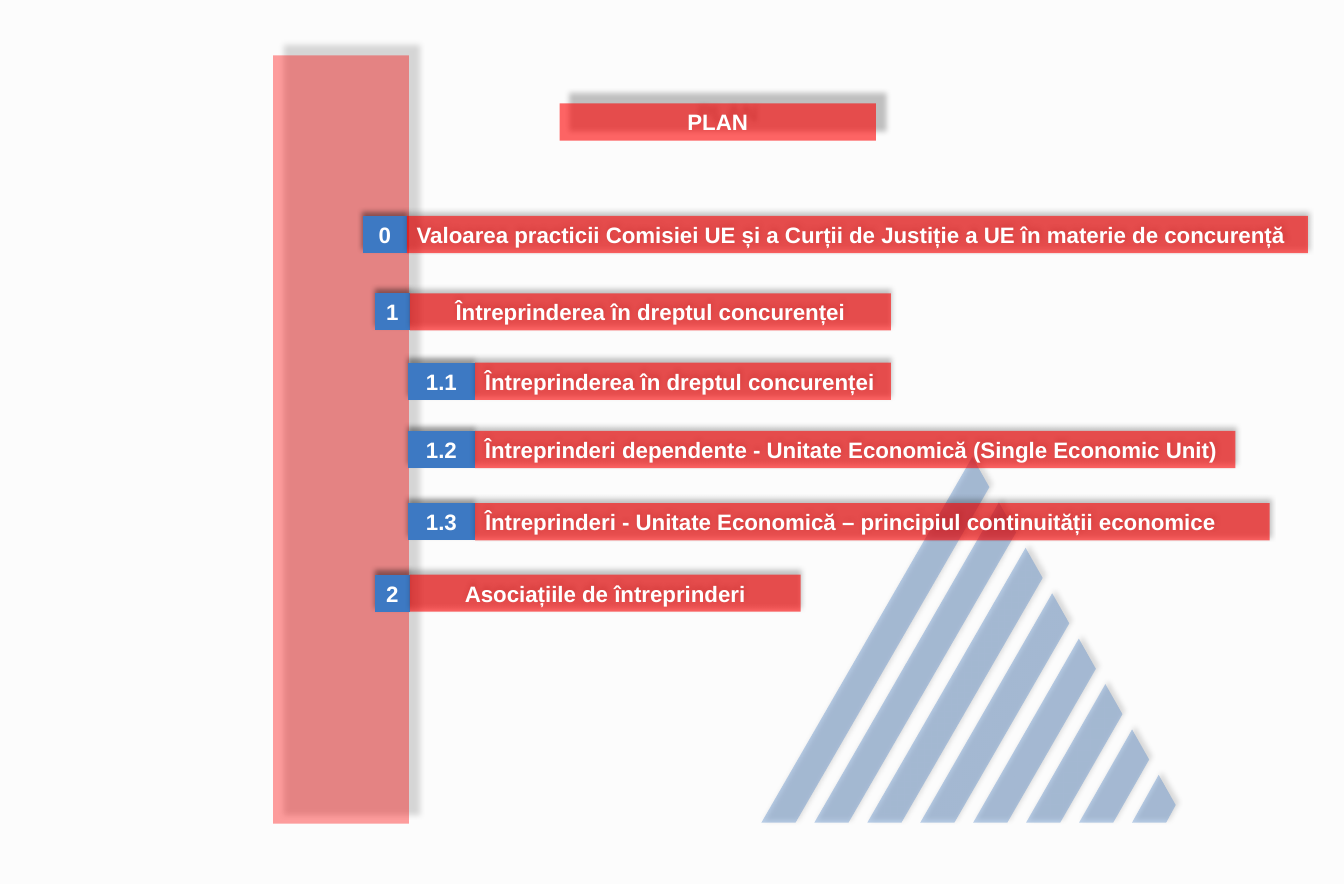
import pptx
import pptx.dml.color
import pptx.enum.shapes
import pptx.enum.text
import pptx.oxml
import pptx.oxml.ns
import pptx.util
from dataclasses import dataclass
from pptx.util import Inches


@dataclass(frozen=True)
class Theme:
    background: str = "FCFCFC"
    red: str = "FF0000"
    blue: str = "3D79C3"
    white: str = "FFFFFF"
    shadow: str = "000000"
    font: str = "Arial"
    size: int = 16


theme = Theme()
Shape = pptx.enum.shapes.MSO_SHAPE
Align = pptx.enum.text.PP_ALIGN


def paint(shape, color, opacity=100, distance=3, angle=270):
    """Fill without outline, with an outer shadow."""
    shape.fill.solid()
    shape.fill.fore_color.rgb = pptx.dml.color.RGBColor.from_string(color)
    shape.line.fill.background()
    shape.shadow.inherit = False
    namespace = pptx.oxml.ns.nsdecls("a")
    properties = shape.element.spPr
    if opacity < 100:
        fill_color = properties.find(pptx.oxml.ns.qn("a:solidFill"))[0]
        fill_color.append(pptx.oxml.parse_xml(f'<a:alpha {namespace} val="{opacity * 1000}"/>'))
    properties.find(pptx.oxml.ns.qn("a:effectLst")).append(pptx.oxml.parse_xml(
        f'<a:outerShdw {namespace} blurRad="{pptx.util.Pt(4)}" dist="{pptx.util.Pt(distance)}"'
        f' dir="{angle * 60000}" rotWithShape="0">'
        f'<a:srgbClr val="{theme.shadow}"><a:alpha val="40000"/></a:srgbClr></a:outerShdw>'))


def write(shape, text, align=Align.CENTER, anchor=pptx.enum.text.MSO_ANCHOR.MIDDLE):
    """Put one bold white line into a shape."""
    frame = shape.text_frame
    frame.word_wrap = True
    frame.auto_size = pptx.enum.text.MSO_AUTO_SIZE.SHAPE_TO_FIT_TEXT
    frame.vertical_anchor = anchor
    para = frame.paragraphs[0]
    para.alignment = align
    span = para.add_run()
    span.text = text
    span.font.name = theme.font
    span.font.size = pptx.util.Pt(theme.size)
    span.font.bold = True
    span.font.color.rgb = pptx.dml.color.RGBColor.from_string(theme.white)


deck = pptx.Presentation()
deck.slide_width, deck.slide_height = Inches(13.38), Inches(8.8)
page = deck.slides.add_slide(deck.slide_layouts[6])
page.background.fill.solid()
page.background.fill.fore_color.rgb = pptx.dml.color.RGBColor.from_string(theme.background)

# Vertical red band
band = page.shapes.add_shape(Shape.RECTANGLE, Inches(2.72), Inches(0.55), Inches(1.35), Inches(7.65))
paint(band, theme.red, opacity=38, distance=10, angle=315)

# Striped triangle: each stripe starts further down the right edge
base = 8.19
for index in range(8):
    tip_x, tip_y = 9.68 + 0.265 * index, 4.55 + 0.452 * index
    foot = 7.58 + 0.527 * index
    corners = [(tip_x + 0.17, tip_y + 0.3), (foot + 0.34, base), (foot, base)]
    builder = page.shapes.build_freeform(Inches(tip_x), Inches(tip_y))
    builder.add_line_segments([(Inches(x), Inches(y)) for x, y in corners], close=True)
    paint(builder.convert_to_shape(), theme.blue, opacity=34, angle=315)

# Heading
heading = page.shapes.add_shape(Shape.RECTANGLE, Inches(5.57), Inches(1.03), Inches(3.15), Inches(0.37))
paint(heading, theme.red, opacity=60, distance=10, angle=315)
write(heading, "PLAN", anchor=pptx.enum.text.MSO_ANCHOR.TOP)

# Plan rows: number, text, top, number left, bar left, bar width, alignment
rows = [
    ("0", "Valoarea practicii Comisiei UE și a Curții de Justiție a UE în materie de concurență",
     2.15, 3.61, 4.05, 8.97, Align.LEFT),
    ("1", "Întreprinderea în dreptul concurenței", 2.92, 3.73, 4.08, 4.79, Align.CENTER),
    ("1.1", "Întreprinderea în dreptul concurenței", 3.61, 4.06, 4.73, 4.14, Align.LEFT),
    ("1.2", "Întreprinderi dependente - Unitate Economică (Single Economic Unit)",
     4.29, 4.06, 4.73, 7.57, Align.LEFT),
    ("1.3", "Întreprinderi - Unitate Economică – principiul continuității economice",
     5.01, 4.06, 4.73, 7.91, Align.LEFT),
    ("2", "Asociațiile de întreprinderi", 5.72, 3.73, 4.08, 3.89, Align.CENTER),
]
for number, text, top, number_left, bar_left, bar_width, align in rows:
    box = page.shapes.add_shape(Shape.FLOWCHART_PROCESS, Inches(number_left), Inches(top),
                                Inches(bar_left - number_left), Inches(0.37))
    paint(box, theme.blue)
    write(box, number)
    bar = page.shapes.add_shape(Shape.FLOWCHART_PROCESS, Inches(bar_left), Inches(top),
                                Inches(bar_width), Inches(0.37))
    paint(bar, theme.red, opacity=60)
    write(bar, text, align=align)

deck.save("out.pptx")
